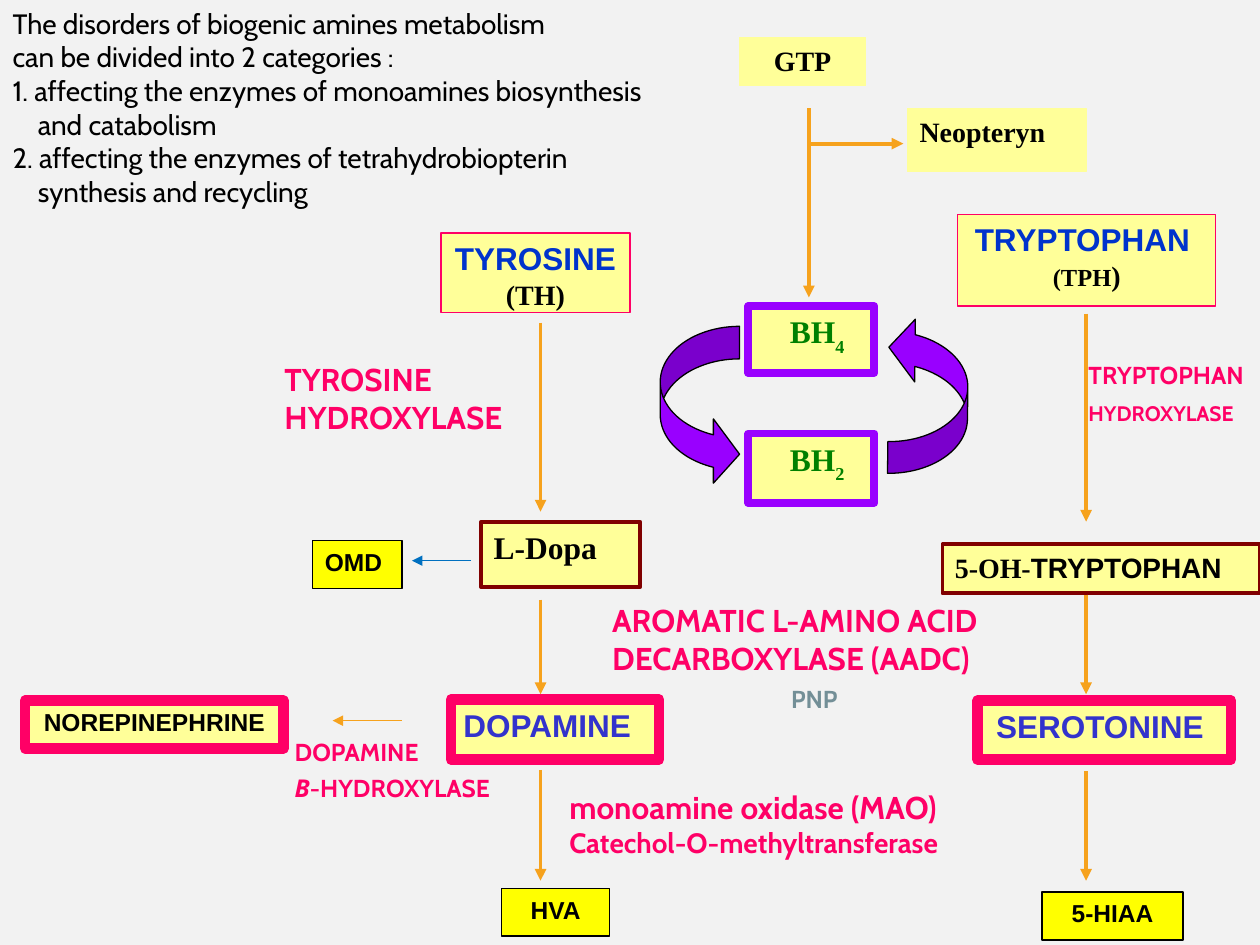
from lxml.etree import SubElement
from pptx import Presentation
from pptx.dml.color import RGBColor
from pptx.enum.shapes import MSO_CONNECTOR as CONN, MSO_SHAPE as SHAPE
from pptx.enum.text import MSO_ANCHOR as ANCHOR, MSO_AUTO_SIZE as FIT, PP_ALIGN as ALIGN
from pptx.oxml.ns import qn
from pptx.util import Pt

SCALE = 9144
CABIN, ARIAL, TIMES = "Cabin", "Arial", "Times New Roman"
BLACK, PINK, ORANGE, PURPLE = "000000", "FF0066", "F6A21D", "9900FF"
PALE, YELLOW, MAROON, BLUE, INDIGO = "FFFF99", "FFFF00", "800000", "0033CC", "3333CC"


def px(*values):
    return [v * SCALE for v in values]


def rgb(value):
    return RGBColor.from_string(value)


def style(font, size=None, name=None, color=None, bold=None, italic=None):
    if size:
        font.size = Pt(size)
    if name:
        font.name = name
    if color:
        font.color.rgb = rgb(color)
    if bold is not None:
        font.bold = bold
    if italic is not None:
        font.italic = italic


class Pathway:
    def __init__(self, prs):
        self.slide = prs.slides.add_slide(prs.slide_layouts[1])
        fill = self.slide.background.fill
        fill.solid()
        fill.fore_color.rgb = rgb("F2F2F2")

    def text(self, tf, paras, size, name, color, bold=True, align=ALIGN.LEFT):
        tf.word_wrap = True
        for i, runs in enumerate(paras):
            p = tf.add_paragraph() if i else tf.paragraphs[0]
            p.alignment = align
            style(p.font, size, name, color, bold)
            for run in [runs] if isinstance(runs, str) else runs:
                words, changes = (run, {}) if isinstance(run, str) else run
                r = p.add_run()
                r.text = words
                style(r.font, **changes)

    def intro(self, at, lines, indent):
        title, body = self.slide.placeholders
        title.element.getparent().remove(title.element)
        body.left, body.top, body.width, body.height = px(*at)
        tf = body.text_frame
        self.text(tf, [words for words, _ in lines], 16, CABIN, BLACK, False)
        tf.auto_size = FIT.NONE
        tf.vertical_anchor = ANCHOR.TOP
        for p, (_, inset) in zip(tf.paragraphs, lines):
            p.space_before = Pt(0)
            pPr = p._p.get_or_add_pPr()
            pPr.set("marL", str(indent * SCALE if inset else 0))
            pPr.set("indent", "0")
            pPr.insert_element_before(pPr.makeelement(qn("a:buNone")), "a:tabLst", "a:defRPr")

    def shape(self, kind, at, fill, line, width):
        sp = self.slide.shapes.add_shape(kind, *px(*at))
        sp.shadow.inherit = False
        sp.fill.solid()
        sp.fill.fore_color.rgb = rgb(fill)
        sp.line.color.rgb = rgb(line)
        sp.line.width = Pt(width)
        return sp

    def box(self, at, paras, size, name=ARIAL, color=BLACK, fill=PALE,
            line=PINK, width=0.75, align=ALIGN.CENTER):
        tf = self.shape(SHAPE.RECTANGLE, at, fill, line, width).text_frame
        tf.vertical_anchor = ANCHOR.TOP
        self.text(tf, paras, size, name, color, align=align)
        return tf

    def cofactor(self, at, digit):
        tf = self.box(at, [["BH", digit]], 18, TIMES, "008000", line=PURPLE,
                      width=4.5, align=ALIGN.LEFT)
        p = tf.paragraphs[0]
        p._p.get_or_add_pPr().set("marL", str(23 * SCALE))
        p.runs[1]._r.get_or_add_rPr().set("baseline", "-30000")

    def curve(self, kind, at, adjustments):
        sp = self.shape(kind, at, PURPLE, BLACK, 0.75)
        for i, value in enumerate(adjustments):
            sp.adjustments[i] = value
        return sp

    def label(self, at, paras, size, color=PINK):
        tf = self.slide.shapes.add_textbox(*px(*at)).text_frame
        tf.vertical_anchor = ANCHOR.MIDDLE
        tf.auto_size = FIT.SHAPE_TO_FIT_TEXT
        self.text(tf, paras, size, CABIN, color)

    def arrow(self, x1, y1, x2, y2, color=ORANGE, width=2.25):
        c = self.slide.shapes.add_connector(CONN.STRAIGHT, *px(x1, y1, x2, y2))
        c.line.color.rgb = rgb(color)
        c.line.width = Pt(width)
        SubElement(c.line._get_or_add_ln(), qn("a:tailEnd"), type="triangle")
        SubElement(c._element.spPr, qn("a:effectLst"))


def main():
    prs = Presentation()
    prs.slide_width, prs.slide_height = px(1000, 750)
    s = Pathway(prs)

    s.intro((0, 0, 563, 170), [
        ("The disorders of biogenic amines metabolism", False),
        ("can be divided into 2 categories :", False),
        ("1. affecting the enzymes of monoamines biosynthesis", False),
        ("and catabolism", True),
        ("2. affecting the enzymes of tetrahydrobiopterin", False),
        ("synthesis and recycling", True),
    ], 20)

    th = [("(TH)", dict(size=16, name=TIMES, color=BLACK))]
    tph = [("(TPH", dict(size=14, name=TIMES, color=BLACK)),
           (")", dict(size=16, name=TIMES, color=BLACK))]
    s.box((350, 185, 150, 63), ["TYROSINE", th], 18, color=BLUE)
    s.box((760, 170, 205, 73), ["TRYPTOPHAN ", tph], 18, color=BLUE)
    s.box((382, 414, 126, 52), ["L-Dopa"], 18, TIMES, line=MAROON, width=2.25, align=ALIGN.LEFT)
    s.box((748, 432, 252, 39),
          [[("5-OH-", dict(name=TIMES)), ("TRYPTOPHAN", dict(name=ARIAL))]],
          16, None, line=MAROON, width=2.25, align=ALIGN.LEFT)

    s.box((358, 555, 165, 48), ["DOPAMINE"], 18, color=INDIGO, width=6, align=ALIGN.LEFT)
    s.box((776, 556, 201, 47), ["SEROTONINE "], 18, color=INDIGO, width=6)
    s.box((20, 556, 205, 38), ["NOREPINEPHRINE"], 14, width=6)

    for name, at in [("HVA", (398, 705, 86, 38)), ("OMD", (248, 429, 71, 38)),
                     ("5-HIAA", (827, 708, 112, 38))]:
        align = ALIGN.LEFT if name == "OMD" else ALIGN.CENTER
        s.box(at, [name], 14, fill=YELLOW, line=BLACK, align=align)

    s.box((587, 30, 100, 38), ["GTP"], 16, TIMES, line=PALE)
    s.box((720, 86, 142, 50), ["Neopteryn"], 16, TIMES, line=PALE, align=ALIGN.LEFT)

    s.cofactor((594, 243, 100, 53), "4")
    s.cofactor((594, 344, 100, 55), "2")
    s.curve(SHAPE.CURVED_RIGHT_ARROW, (524, 259, 63, 127), (0.41, 0.81, 0.33))
    back = s.curve(SHAPE.CURVED_LEFT_ARROW, (705, 251, 63, 125), (0.4, 0.79, 0.33))
    back.rotation = 180.6
    back._element.spPr.xfrm.set("flipH", "1")

    for x, spans in [(429, [(256, 406), (476, 551), (611, 699)]),
                     (642, [(86, 236)]),
                     (862, [(249, 414), (472, 551), (612, 699)])]:
        for top, bottom in spans:
            s.arrow(x, top, x, bottom)
    s.arrow(642, 114, 717, 114)
    s.arrow(374, 445, 327, 445, "0070C0", 0.75)
    s.arrow(319, 572, 264, 572, width=0.75)

    spacer = (" ", dict(size=18))
    s.label((618, 532, 64, 40), [["PNP", spacer]], 14, "738F97")
    s.label((476, 472, 370, 70), ["AROMATIC L-AMINO ACID DECARBOXYLASE (AADC)"], 18)
    s.label((854, 281, 165, 63),
            ["TRYPTOPHAN", [("HYDROXYLASE", dict(size=12)), spacer]], 14)
    s.label((216, 281, 220, 70), ["TYROSINE", "HYDROXYLASE"], 18)
    s.label((224, 580, 196, 63),
            ["DOPAMINE", [("Β", dict(italic=True)), "-HYDROXYLASE", spacer]], 14)
    s.label((442, 620, 420, 67),
            ["monoamine oxidase (MAO)", [("Catechol-O-methyltransferase", dict(size=16))]], 18)

    prs.save("out.pptx")


if __name__ == "__main__":
    main()
